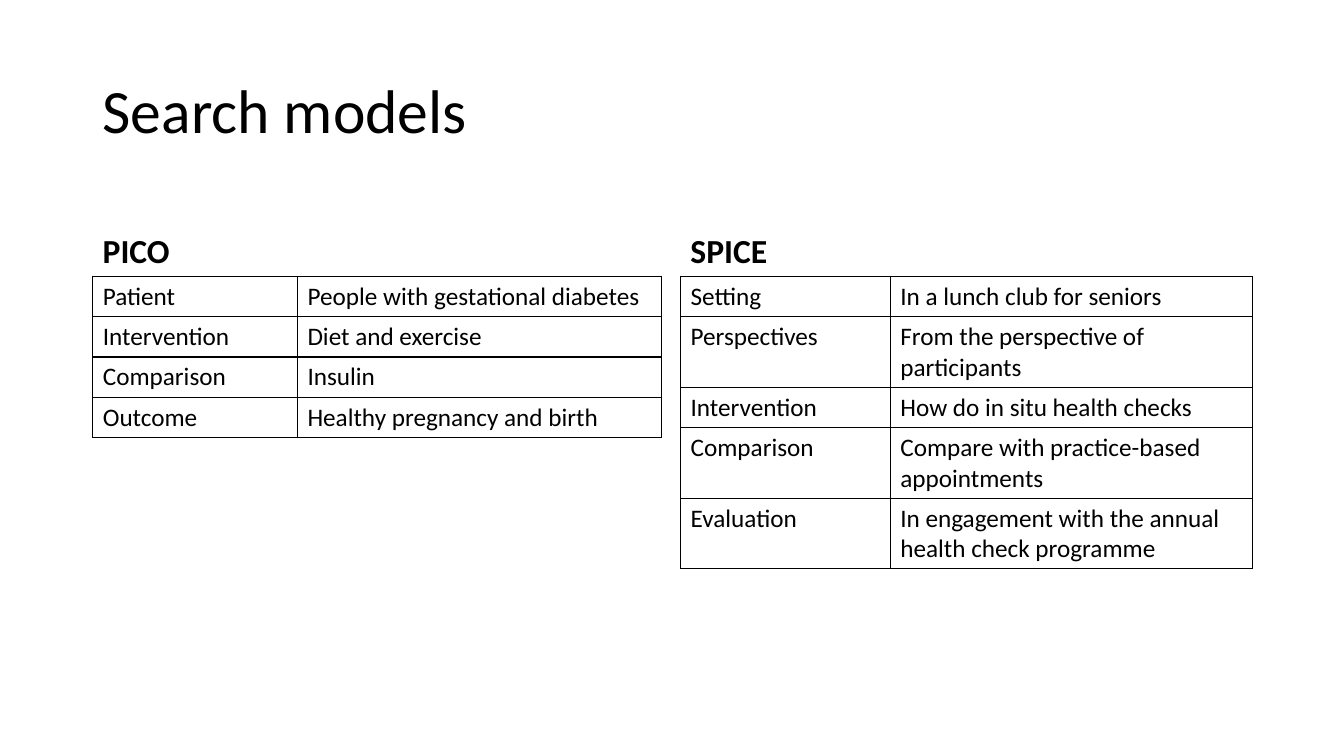
from lxml import etree
from pptx import Presentation
from pptx.dml.color import RGBColor
from pptx.enum.text import MSO_ANCHOR
from pptx.oxml.ns import qn
from pptx.util import Inches, Pt

BLACK = RGBColor(0, 0, 0)
MIDDLE = MSO_ANCHOR.MIDDLE
BOTTOM = MSO_ANCHOR.BOTTOM
FONT = "Calibri"
HEADING_TOP = 1.84
HEADING_HEIGHT = 0.9
ROW_HEIGHT = 0.4

MODELS = [
    ("PICO", 0.92, (2.03, 3.61), [
        ("Patient", "People with gestational diabetes"),
        ("Intervention", "Diet and exercise"),
        ("Comparison", "Insulin"),
        ("Outcome", "Healthy pregnancy and birth"),
    ]),
    ("SPICE", 6.75, (2.08, 3.59), [
        ("Setting", "In a lunch club for seniors"),
        ("Perspectives", "From the perspective of participants"),
        ("Intervention", "How do in situ health checks"),
        ("Comparison", "Compare with practice-based appointments"),
        ("Evaluation", "In engagement with the annual health check programme"),
    ]),
]


def add_heading(text, left, top, width, height, size, anchor, bold=False):
    box = page.shapes.add_textbox(Inches(left), Inches(top), Inches(width), Inches(height))
    frame = box.text_frame
    frame.word_wrap = True
    frame.vertical_anchor = anchor
    para = frame.paragraphs[0]
    para.text = text
    para.line_spacing = 0.9
    para.font.name = FONT
    para.font.size = Pt(size)
    para.font.bold = bold
    para.font.color.rgb = BLACK


def fill_cell(cell, text):
    cell.text = text
    font = cell.text_frame.paragraphs[0].font
    font.name = FONT
    font.size = Pt(18)
    font.bold = False
    font.color.rgb = BLACK
    properties = cell._tc.get_or_add_tcPr()
    for side in ("a:lnL", "a:lnR", "a:lnT", "a:lnB"):
        line = etree.SubElement(properties, qn(side), w=str(Pt(1)))
        solid = etree.SubElement(line, qn("a:solidFill"))
        etree.SubElement(solid, qn("a:srgbClr"), val=str(BLACK))
    cell.fill.background()


deck = Presentation()
deck.slide_width = Inches(13.33)
deck.slide_height = Inches(7.5)
page = deck.slides.add_slide(deck.slide_layouts[6])

add_heading("Search models", 0.92, 0.4, 11.5, 1.45, 44, MIDDLE)

for name, left, column_widths, rows in MODELS:
    width = sum(column_widths)
    add_heading(name, left, HEADING_TOP, width, HEADING_HEIGHT, 24, BOTTOM, bold=True)
    table = page.shapes.add_table(
        len(rows), len(column_widths),
        Inches(left), Inches(HEADING_TOP + HEADING_HEIGHT),
        Inches(width), Inches(ROW_HEIGHT * len(rows)),
    ).table
    table.first_row = False
    table.horz_banding = False
    for column, column_width in zip(table.columns, column_widths):
        column.width = Inches(column_width)
    for row, texts in zip(table.rows, rows):
        for cell, text in zip(row.cells, texts):
            fill_cell(cell, text)

deck.save("out.pptx")
